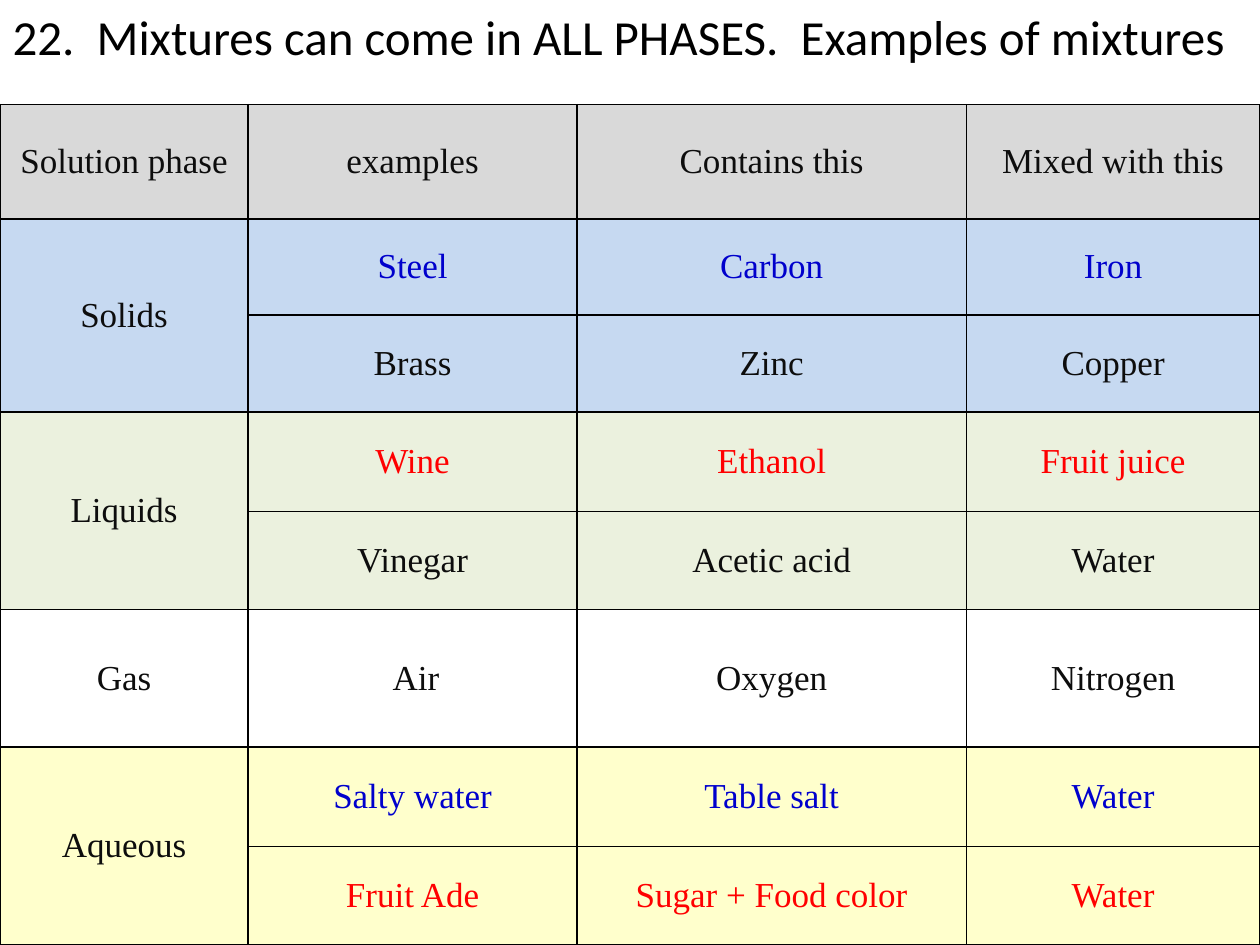
import pptx
import pptx.dml.color
import pptx.enum.text
import pptx.oxml
import pptx.oxml.ns
import pptx.util

Inches = pptx.util.Inches
Pt = pptx.util.Pt
RGBColor = pptx.dml.color.RGBColor
MSO_ANCHOR = pptx.enum.text.MSO_ANCHOR
PP_ALIGN = pptx.enum.text.PP_ALIGN

BLACK = RGBColor(0x00, 0x00, 0x00)
WHITE = RGBColor(0xFF, 0xFF, 0xFF)
INK = RGBColor(0x0D, 0x0D, 0x0D)
BLUE = RGBColor(0x00, 0x00, 0xCC)
RED = RGBColor(0xFF, 0x00, 0x00)
HEADER_GRAY = RGBColor(0xD9, 0xD9, 0xD9)
SOLID_BLUE = RGBColor(0xC6, 0xD9, 0xF1)
LIQUID_GREEN = RGBColor(0xEB, 0xF1, 0xDE)
AQUEOUS_YELLOW = RGBColor(0xFF, 0xFF, 0xCC)

TITLE = "22.  Mixtures can come in ALL PHASES.  Examples of mixtures"
TITLE_FONT = {"name": "Calibri", "size": Pt(28), "bold": False}
TABLE_FONT = {"name": "Times New Roman", "size": Pt(20), "bold": False}

COLUMN_WIDTHS = [1.97, 2.61, 3.09, 2.33]
ROW_HEIGHTS = [0.91, 0.76, 0.77, 0.79, 0.78, 1.09, 0.79, 0.78]

PHASES = [
    ("Solution phase", HEADER_GRAY, [
        (INK, ["examples", "Contains this", "Mixed with this"]),
    ]),
    ("Solids", SOLID_BLUE, [
        (BLUE, ["Steel", "Carbon", "Iron"]),
        (INK, ["Brass", "Zinc", "Copper"]),
    ]),
    ("Liquids", LIQUID_GREEN, [
        (RED, ["Wine", "Ethanol", "Fruit juice"]),
        (INK, ["Vinegar", "Acetic acid", "Water"]),
    ]),
    ("Gas", WHITE, [
        (INK, [" Air", "Oxygen", "Nitrogen"]),
    ]),
    ("Aqueous", AQUEOUS_YELLOW, [
        (BLUE, ["Salty water", "Table salt", "Water"]),
        (RED, ["Fruit Ade", "Sugar + Food color", "Water"]),
    ]),
]


def set_values(target, values):
    for name, value in values.items():
        setattr(target, name, value)


def write_text(text_frame, text, alignment, font_values, color):
    text_frame.text = text
    paragraph = text_frame.paragraphs[0]
    paragraph.alignment = alignment
    font = paragraph.runs[0].font
    set_values(font, font_values)
    font.color.rgb = color


def add_title(slide):
    title = slide.shapes.title
    set_values(title, {"left": Inches(0), "top": Inches(0),
                       "width": Inches(10), "height": Inches(1.04)})
    set_values(title.text_frame, {
        "word_wrap": True,
        "auto_size": pptx.enum.text.MSO_AUTO_SIZE.NONE,
        "vertical_anchor": MSO_ANCHOR.TOP,
    })
    write_text(title.text_frame, TITLE, PP_ALIGN.LEFT, TITLE_FONT, BLACK)


def format_cell(cell, fill_color):
    properties = cell._tc.get_or_add_tcPr()
    for side in ("lnL", "lnR", "lnT", "lnB"):
        properties.append(pptx.oxml.parse_xml(
            f'<a:{side} {pptx.oxml.ns.nsdecls("a")} w="{Pt(1)}"><a:solidFill>'
            f'<a:srgbClr val="{BLACK}"/></a:solidFill></a:{side}>'))
    cell.fill.solid()
    cell.fill.fore_color.rgb = fill_color
    cell.vertical_anchor = MSO_ANCHOR.MIDDLE


def fill_phase(table, first_row, phase, fill_color, examples):
    last_row = first_row + len(examples) - 1
    for row, (color, texts) in enumerate(examples, first_row):
        format_cell(table.cell(row, 0), fill_color)
        for column, text in enumerate(texts, 1):
            cell = table.cell(row, column)
            format_cell(cell, fill_color)
            write_text(cell.text_frame, text, PP_ALIGN.CENTER, TABLE_FONT, color)
    phase_cell = table.cell(first_row, 0)
    write_text(phase_cell.text_frame, phase, PP_ALIGN.CENTER, TABLE_FONT, INK)
    if last_row > first_row:
        phase_cell.merge(table.cell(last_row, 0))
    return last_row + 1


def add_mixture_table(slide):
    table = slide.shapes.add_table(
        len(ROW_HEIGHTS), len(COLUMN_WIDTHS),
        Inches(0), Inches(0.83), Inches(10), Inches(6.67)).table
    set_values(table, {"first_row": False, "horz_banding": False})
    for column, width in zip(table.columns, COLUMN_WIDTHS):
        column.width = Inches(width)
    for row, height in zip(table.rows, ROW_HEIGHTS):
        row.height = Inches(height)
    next_row = 0
    for phase, fill_color, examples in PHASES:
        next_row = fill_phase(table, next_row, phase, fill_color, examples)


def main():
    presentation = pptx.Presentation()
    set_values(presentation, {"slide_width": Inches(10), "slide_height": Inches(7.5)})
    slide = presentation.slides.add_slide(presentation.slide_layouts[5])
    add_title(slide)
    add_mixture_table(slide)
    presentation.save("out.pptx")


if __name__ == "__main__":
    main()
